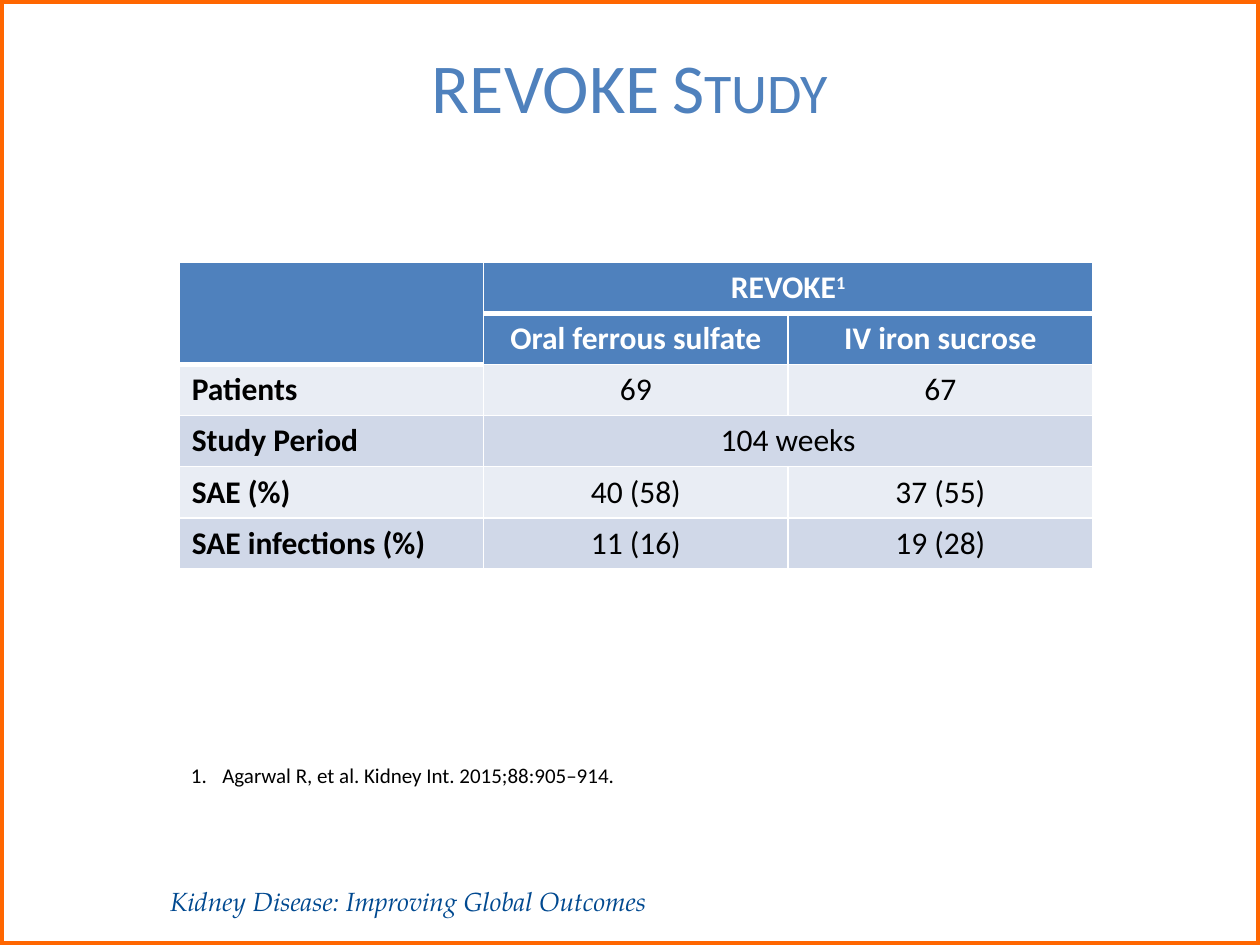
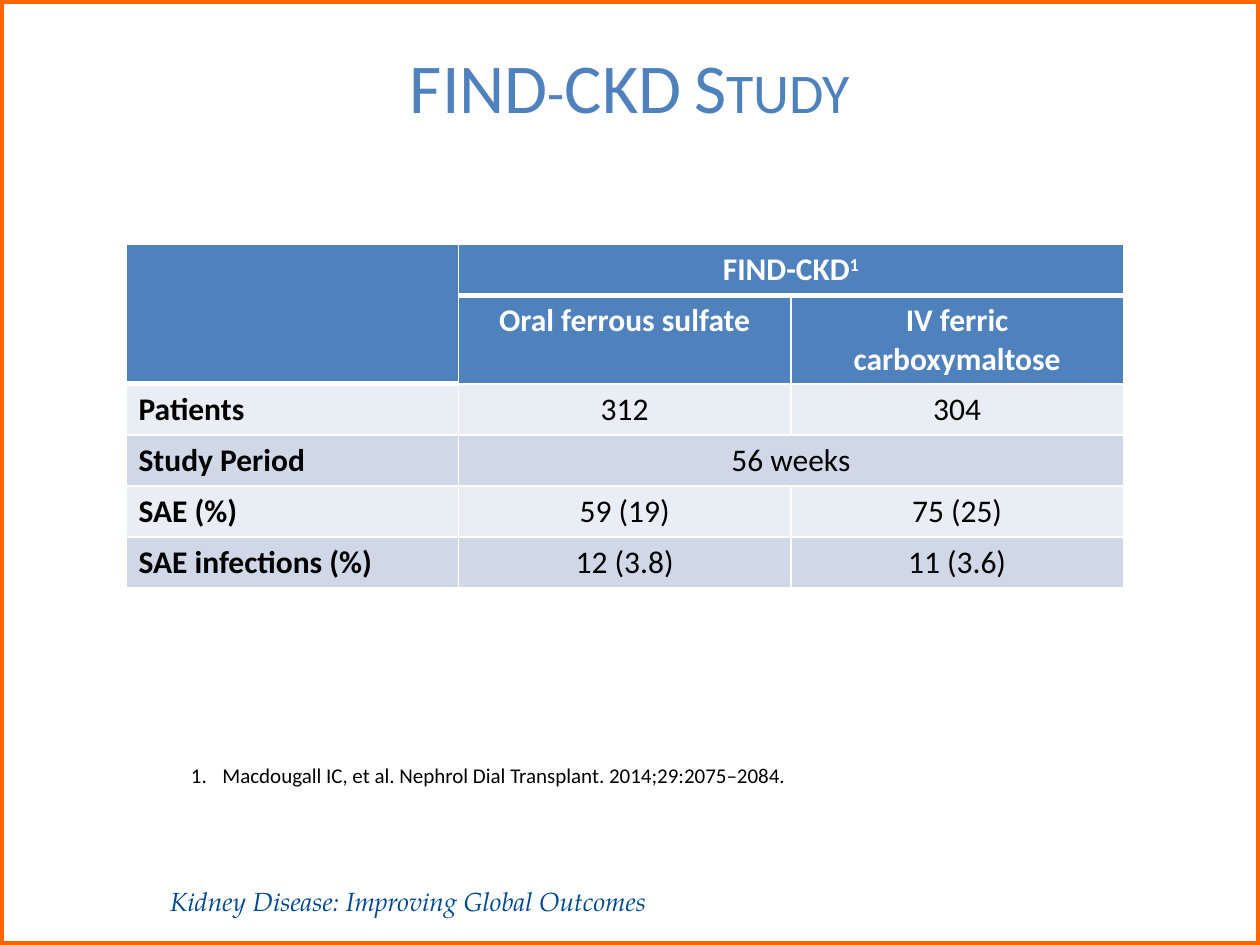
from lxml import etree
from pptx import Presentation
from pptx.dml.color import RGBColor
from pptx.enum.shapes import MSO_SHAPE
from pptx.enum.text import PP_ALIGN
from pptx.oxml.ns import qn
from pptx.util import Pt

RECTANGLE = MSO_SHAPE.RECTANGLE
LEFT, CENTER = PP_ALIGN.LEFT, PP_ALIGN.CENTER

# Shared look
SLIDE_W, SLIDE_H = 720, 540
BODY_FONT, FOOTER_FONT = "Calibri", "TeX Gyre Pagella"
BLUE, NAVY, ORANGE = "4F81BD", "004990", "FF6600"
WHITE, BLACK = "FFFFFF", "000000"
BANDS = ("E9EDF4", "D0D8E8")
FOOTER = "Kidney Disease: Improving Global Outcomes"

# Table rules
ROW_H = 29.2
HEADER_ROWS = 2
THICK_BELOW = {(0, 0), (0, 1), (0, 2), (1, 0)}

STUDIES = [
    {
        "name": "REVOKE",
        "table_box": (102.4, 149.9, 522),
        "arms": ("Oral ferrous sulfate", "IV iron sucrose"),
        "results": [
            ("Patients", "69", "67"),
            ("Study Period", "104 weeks"),
            ("SAE (%)", "40 (58)", "37 (55)"),
            ("SAE infections (%)", "11 (16)", "19 (28)"),
        ],
        "reference": "Agarwal R, et al. Kidney Int. 2015;88:905–914.",
    },
    {
        "name": "FIND-CKD",
        "table_box": (72, 139.7, 570),
        "arms": ("Oral ferrous sulfate", "IV ferric carboxymaltose"),
        "results": [
            ("Patients", "312", "304"),
            ("Study Period", "56 weeks"),
            ("SAE (%)", "59 (19)", "75 (25)"),
            ("SAE infections (%)", "12 (3.8)", "11 (3.6)"),
        ],
        "reference": "Macdougall IC, et al. Nephrol Dial Transplant. "
                     "2014;29:2075–2084.",
    },
]


def rgb(hex_color):
    return RGBColor.from_string(hex_color)


def add_run(paragraph, text, size, color, font=BODY_FONT, bold=False,
            italic=False, **attributes):
    run = paragraph.add_run()
    run.text = text
    run.font.name = font
    run.font.size = Pt(size)
    run.font.bold = bold
    run.font.italic = italic
    run.font.color.rgb = rgb(color)
    for key, value in attributes.items():
        run._r.get_or_add_rPr().set(key, value)


def add_text_box(slide, left, top, width, height, align=LEFT):
    """Add an empty wrapping box and return its first paragraph."""
    box = slide.shapes.add_textbox(Pt(left), Pt(top), Pt(width), Pt(height))
    box.text_frame.word_wrap = True
    paragraph = box.text_frame.paragraphs[0]
    paragraph.alignment = align
    return paragraph


def add_footer_and_frame(slide):
    footer = add_text_box(slide, 90, 502.5, 558, 25)
    add_run(footer, FOOTER, 15, NAVY, FOOTER_FONT, italic=True)
    frame = slide.shapes.add_shape(RECTANGLE, 0, 0, Pt(SLIDE_W), Pt(SLIDE_H))
    frame.shadow.inherit = False
    frame.fill.background()
    frame.line.color.rgb = rgb(ORANGE)
    frame.line.width = Pt(4.5)


def add_title(slide, study_name):
    title = add_text_box(slide, 36, 21.6, 648, 90, CENTER)
    add_run(title, f"{study_name} Study", 40, BLUE, cap="small")


def add_reference(slide, reference):
    paragraph = add_text_box(slide, 102, 432, 588, 22)
    properties = paragraph._p.get_or_add_pPr()
    properties.set("marL", str(Pt(18)))
    properties.set("indent", str(-Pt(18)))
    etree.SubElement(properties, qn("a:buFont"), typeface="+mj-lt")
    etree.SubElement(properties, qn("a:buAutoNum"), type="arabicPeriod")
    add_run(paragraph, reference, 12, BLACK)


def set_borders(cell, row, column):
    widths = {
        "L": 1,
        "R": 1,
        "T": 3 if (row - 1, column) in THICK_BELOW else 1,
        "B": 3 if (row, column) in THICK_BELOW else 1,
    }
    properties = cell._tc.get_or_add_tcPr()
    for side, width in widths.items():
        line = etree.SubElement(properties, qn(f"a:ln{side}"), w=str(Pt(width)))
        fill = etree.SubElement(line, qn("a:solidFill"))
        etree.SubElement(fill, qn("a:srgbClr"), val=WHITE)


def add_study_table(slide, study):
    left, top, width = study["table_box"]
    rows = [("", study["name"]), ("", *study["arms"]), *study["results"]]
    table = slide.shapes.add_table(len(rows), 3, Pt(left), Pt(top), Pt(width),
                                   Pt(ROW_H * len(rows))).table
    table.first_row = table.horz_banding = False
    for column in table.columns:
        column.width = Pt(width / 3)

    for r, texts in enumerate(rows):
        table.rows[r].height = Pt(ROW_H)
        is_header = r < HEADER_ROWS
        for c in range(3):
            cell = table.cell(r, c)
            set_borders(cell, r, c)
            cell.fill.solid()
            cell.fill.fore_color.rgb = rgb(BLUE if is_header else BANDS[r % 2])
        for c, text in enumerate(texts):
            if text:
                paragraph = table.cell(r, c).text_frame.paragraphs[0]
                paragraph.alignment = CENTER if c else LEFT
                add_run(paragraph, text, 18, WHITE if is_header else BLACK,
                        bold=is_header or c == 0)
        # A single value covers both treatment arms
        if len(texts) == 2:
            table.cell(r, 1).merge(table.cell(r, 2))

    # Citation mark and the empty corner
    add_run(table.cell(0, 1).text_frame.paragraphs[0], "1", 18, WHITE,
            bold=True, baseline="30000")
    table.cell(0, 0).merge(table.cell(1, 0))


def main():
    deck = Presentation()
    deck.slide_width, deck.slide_height = Pt(SLIDE_W), Pt(SLIDE_H)
    for study in STUDIES:
        slide = deck.slides.add_slide(deck.slide_layouts[6])
        add_footer_and_frame(slide)
        add_title(slide, study["name"])
        add_study_table(slide, study)
        add_reference(slide, study["reference"])
    deck.save("out.pptx")


if __name__ == "__main__":
    main()
